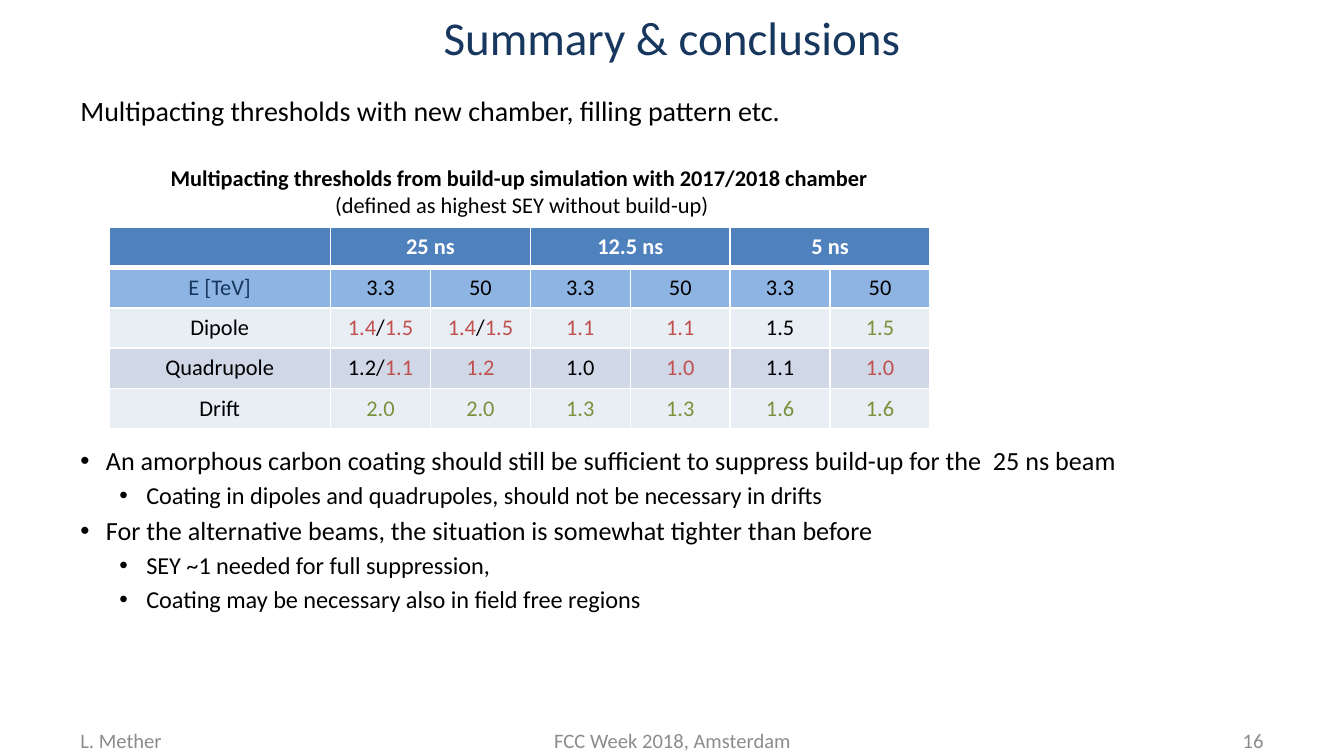
from dataclasses import dataclass

from lxml import etree
from pptx import Presentation
from pptx import util as u
from pptx.dml.color import RGBColor
from pptx.enum import text
from pptx.oxml.ns import qn

ALIGN = text.PP_ALIGN


@dataclass(frozen=True)
class Theme:
    font: str = "Calibri"
    ink: str = "000000"
    navy: str = "17375E"
    gray: str = "8C8C8C"
    white: str = "FFFFFF"
    red: str = "C0504D"
    green: str = "77933C"
    head: str = "4F81BD"
    sub: str = "8EB4E3"
    pale: str = "E9EDF4"
    band: str = "D0D8E8"
    title: float = 25.2
    intro: float = 15
    levels: tuple = (14, 13)
    small: float = 12
    foot: float = 11


T = Theme()

HEADS = ["25 ns", "12.5 ns", "5 ns"]
# In the data rows "-" marks a red value and "+" a green one.
ROWS = [
    ("E [TeV]", T.navy, T.sub, ["3.3", "50"] * 3),
    ("Dipole", T.ink, T.pale,
     ["-1.4 / -1.5", "-1.4 / -1.5", "-1.1", "-1.1", "1.5", "+1.5"]),
    ("Quadrupole", T.ink, T.band,
     ["1.2/ -1.1", "-1.2", "1.0", "-1.0", "1.1", "-1.0"]),
    ("Drift", T.ink, T.pale, ["+2.0", "+2.0", "+1.3", "+1.3", "+1.6", "+1.6"]),
]
POINTS = [
    (0, "An amorphous carbon coating should still be sufficient to suppress "
        "build-up for the  25 ns beam"),
    (1, "Coating in dipoles and quadrupoles, should not be necessary in drifts"),
    (0, "For the alternative beams, the situation is somewhat tighter than before"),
    (1, "SEY ~1 needed for full suppression,"),
    (1, "Coating may be necessary also in field free regions"),
]


def add_run(para, words, size, color=T.ink, bold=False):
    run = para.add_run()
    run.text = words
    run.font.name = T.font
    run.font.size = u.Pt(size)
    run.font.bold = bold
    run.font.color.rgb = RGBColor.from_string(color)


def add_box(slide, left, top, width, height, anchor=text.MSO_ANCHOR.TOP):
    box = slide.shapes.add_textbox(*map(u.Inches, (left, top, width, height)))
    frame = box.text_frame
    frame.word_wrap = True
    frame.vertical_anchor = anchor
    return frame


def add_label(slide, words, place, size, color, align=ALIGN.LEFT):
    """Put one vertically centred line of text in a box."""
    para = add_box(slide, *place, text.MSO_ANCHOR.MIDDLE).paragraphs[0]
    para.alignment = align
    add_run(para, words, size, color)


def add_caption(slide):
    para = add_box(slide, 0.81, 1.17, 6.11, 0.5).paragraphs[0]
    para.alignment = ALIGN.CENTER
    add_run(para, "Multipacting thresholds from build-up simulation with "
                  "2017/2018 chamber", T.small, bold=True)
    para.add_line_break()
    add_run(para, " ", T.small, bold=True)
    add_run(para, "(defined as highest SEY without build-up)", T.small)


def add_points(slide):
    frame = add_box(slide, 0.5, 3.26, 9, 1.4)
    for index, (level, words) in enumerate(POINTS):
        para = frame.add_paragraph() if index else frame.paragraphs[0]
        para.level = level
        if index:
            para.space_before = u.Pt(2.5)
        left, hang = ((0.19, 0.19), (0.49, 0.2))[level]
        props = para._p.get_or_add_pPr()
        props.set("marL", str(u.Inches(left)))
        props.set("indent", str(-u.Inches(hang)))
        etree.SubElement(props, qn("a:buFont"), typeface="Arial")
        etree.SubElement(props, qn("a:buChar"), char="•")
        add_run(para, words, T.levels[level])


def set_edges(cell, top, bottom):
    """Draw white cell borders; the lines go before the fill."""
    props = cell._tc.get_or_add_tcPr()
    edges = (("L", 1), ("R", 1), ("T", top), ("B", bottom))
    for index, (side, width) in enumerate(edges):
        line = etree.Element(qn(f"a:ln{side}"), w=str(u.Pt(width)))
        fill = etree.SubElement(line, qn("a:solidFill"))
        etree.SubElement(fill, qn("a:srgbClr"), val=T.white)
        props.insert(index, line)


def fill_cell(cell, runs, fill, bold=False, top=1, bottom=1):
    cell.fill.solid()
    cell.fill.fore_color.rgb = RGBColor.from_string(fill)
    cell.vertical_anchor = text.MSO_ANCHOR.MIDDLE
    cell.margin_top = cell.margin_bottom = u.Inches(0.03)
    set_edges(cell, top, bottom)
    para = cell.text_frame.paragraphs[0]
    para.alignment = ALIGN.CENTER
    para.font.size = u.Pt(T.small)
    for words, color in runs:
        add_run(para, words, T.small, color, bold)


def split_tones(value):
    tones = {"-": T.red, "+": T.green}
    return [(part.lstrip("-+"), tones.get(part[0], T.ink))
            for part in value.split()]


def add_grid(slide):
    width, first, high = 6.11, 1.65, 0.3
    count = 2 * len(HEADS)
    lines = len(ROWS) + 1
    table = slide.shapes.add_table(
        lines, count + 1, u.Inches(0.81), u.Inches(1.69),
        u.Inches(width), u.Inches(high * lines)).table
    for index, col in enumerate(table.columns):
        col.width = u.Inches((width - first) / count if index else first)
    for row in table.rows:
        row.height = u.Inches(high)

    for col in range(count + 1):
        named = col % 2 == 1
        runs = [(HEADS[col // 2], T.white)] if named else []
        fill_cell(table.cell(0, col), runs, T.head, bold=True, bottom=3)
    for col in range(1, count, 2):
        table.cell(0, col).merge(table.cell(0, col + 1))

    for row, (name, color, fill, values) in enumerate(ROWS, 1):
        cells = [[(name, color)]] + [split_tones(value) for value in values]
        for col, runs in enumerate(cells):
            fill_cell(table.cell(row, col), runs, fill, top=3 if row == 1 else 1)


def main():
    deck = Presentation()
    deck.slide_width, deck.slide_height = u.Inches(10), u.Inches(10 * 9 / 16)
    slide = deck.slides.add_slide(deck.slide_layouts[6])

    add_label(slide, "Summary & conclusions", (0, 0, 10, 0.55),
              T.title, T.navy, ALIGN.CENTER)
    intro = add_box(slide, 0.5, 0.65, 9, 0.36)
    add_run(intro.paragraphs[0],
            "Multipacting thresholds with new chamber, filling pattern etc.",
            T.intro)
    add_caption(slide)
    add_grid(slide)
    add_points(slide)
    for words, left, width, align in (
            ("L. Mether", 0.5, 2.33, ALIGN.LEFT),
            ("FCC Week 2018, Amsterdam", 3.42, 3.17, ALIGN.CENTER),
            ("16", 7.17, 2.33, ALIGN.RIGHT)):
        add_label(slide, words, (left, 5.39, width, 0.23), T.foot, T.gray, align)

    deck.save("out.pptx")


if __name__ == "__main__":
    main()
